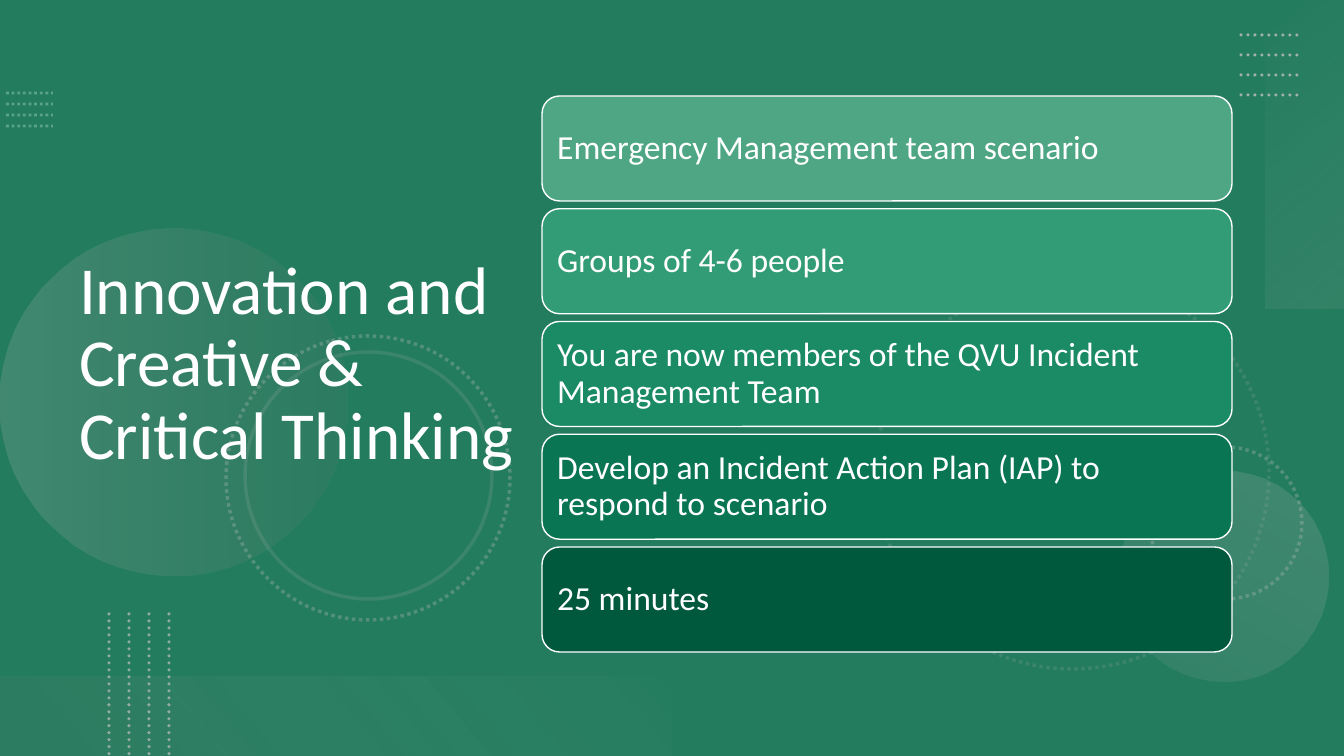
import pptx
import pptx.util
import pptx.dml.color
import pptx.enum.dml
import pptx.enum.shapes
import pptx.enum.text
import pptx.oxml
import pptx.oxml.ns
from lxml import etree

SCALE = 12192000 / 1344
FONT = "Calibri"
SHAPES = pptx.enum.shapes.MSO_SHAPE
NAMESPACE = pptx.oxml.ns.nsdecls("a")


def px(length):
    return pptx.util.Emu(round(length * SCALE))


def color(value):
    return pptx.dml.color.RGBColor.from_string(value)


def set_alpha(fill_parent, percent):
    tag = pptx.oxml.ns.qn("a:srgbClr")
    clr = next(fill_parent.iter(tag))
    etree.SubElement(clr, pptx.oxml.ns.qn("a:alpha"), val=str(percent * 1000))


def style_line(line, value, width, alpha=100, dotted=False):
    line.color.rgb = color(value)
    line.width = pptx.util.Pt(width)
    if dotted:
        line.dash_style = pptx.enum.dml.MSO_LINE.ROUND_DOT
    if alpha < 100:
        set_alpha(line._get_or_add_ln(), alpha)


def add_plain_shape(slide, kind, box, rotation=0):
    shape = slide.shapes.add_shape(kind, *map(px, box))
    shape.rotation = rotation
    shape.shadow.inherit = False
    shape.fill.background()
    shape.line.fill.background()
    return shape


def add_gradient_shape(slide, kind, box, rotation, angle, stops):
    shape = add_plain_shape(slide, kind, box, rotation)
    stop_xml = "".join(
        f'<a:gs pos="{position * 1000}"><a:srgbClr val="{value}">'
        f'<a:alpha val="{alpha * 1000}"/></a:srgbClr></a:gs>'
        for position, value, alpha in stops
    )
    gradient = pptx.oxml.parse_xml(
        f'<a:gradFill {NAMESPACE} rotWithShape="1"><a:gsLst>{stop_xml}</a:gsLst>'
        f'<a:lin ang="{angle * 60000}" scaled="0"/></a:gradFill>'
    )
    properties = shape._element.spPr
    properties.replace(properties.find(pptx.oxml.ns.qn("a:noFill")), gradient)


def add_ring(slide, box, rotation, alpha, dotted=True):
    ring = add_plain_shape(slide, SHAPES.OVAL, box, rotation)
    style_line(ring.line, "BFBFBF", 2.5, alpha, dotted)


def add_dotted_lines(slide, box, count, vertical, value, width, alpha, cap="flat"):
    left, top, box_width, box_height = box
    gap = (box_width if vertical else box_height) / (count - 1)
    for index in range(count):
        if vertical:
            x = left + index * gap
            ends = (x, top, x, top + box_height)
        else:
            y = top + index * gap
            ends = (left, y, left + box_width, y)
        connector = slide.shapes.add_connector(
            pptx.enum.shapes.MSO_CONNECTOR.STRAIGHT, *map(px, ends)
        )
        style_line(connector.line, value, width, alpha, dotted=True)
        connector.line._get_or_add_ln().set("cap", cap)
        etree.SubElement(connector._element.spPr, pptx.oxml.ns.qn("a:effectLst"))


def set_text(shape, text, size, inset):
    frame = shape.text_frame
    frame.word_wrap = True
    frame.vertical_anchor = pptx.enum.text.MSO_ANCHOR.MIDDLE
    frame.margin_left = frame.margin_right = px(inset)
    frame.text = text
    paragraph = frame.paragraphs[0]
    paragraph.alignment = pptx.enum.text.PP_ALIGN.LEFT
    paragraph.line_spacing = 0.9
    font = paragraph.runs[0].font
    font.name = FONT
    font.size = pptx.util.Pt(size)
    font.color.rgb = color("FFFFFF")


def add_backdrop(slide, box):
    left, top, width, height = box
    right, bottom = left + width, top + height
    slide.background.fill.solid()
    slide.background.fill.fore_color.rgb = color("4EA685")
    overlay = add_plain_shape(slide, SHAPES.RECTANGLE, box)
    overlay.fill.solid()
    overlay.fill.fore_color.rgb = color("00583D")
    set_alpha(overlay._element.spPr, 53)

    add_dotted_lines(slide, (left + 6, top + 93, 47, 33), 4, False, "92CCB6", 2, 50)
    add_ring(slide, (right - 468, top + 276, 393, 393), 75, 15)
    add_ring(slide, (right - 194, top + 447, 152, 152), 270, 30)
    add_gradient_shape(
        slide, SHAPES.OVAL, (left, top + 229, 347, 347), 270, 90,
        [(0, "BFBFBF", 20), (100, "808080", 10)],
    )
    add_gradient_shape(
        slide, SHAPES.OVAL, (right - 225, top + 471, 210, 210), 210, 90,
        [(0, "BFBFBF", 10), (100, "BFBFBF", 20)],
    )
    add_ring(slide, (left + 226, top + 336, 284, 284), 75, 30)
    add_ring(slide, (left + 245, top + 352, 247, 247), 75, 15, dotted=False)
    add_gradient_shape(
        slide, SHAPES.RECTANGLE, (right - 193, top + 115, 308, 79), 270, 140,
        [(0, "FFFFFF", 0), (100, "BFBFBF", 10)],
    )
    add_dotted_lines(
        slide, (right - 103, top + 35, 60, 60), 4, False, "BFBFBF", 2.5, 80, "rnd"
    )
    add_gradient_shape(
        slide, SHAPES.RECTANGLE, (left, bottom - 79, width // 2, 79), 180, 140,
        [(10, "808080", 10), (100, "FFFFFF", 0)],
    )
    add_dotted_lines(
        slide, (left + 109, bottom - 142, 60, 142), 4, True, "BFBFBF", 2.5, 70, "rnd"
    )


def add_steps(slide, box, steps):
    left, top, width, height = box
    step_height = 105
    pitch = (height - step_height) / (len(steps) - 1)
    for index, (text, fill) in enumerate(steps):
        step = add_plain_shape(
            slide, SHAPES.ROUNDED_RECTANGLE,
            (left, top + index * pitch, width, step_height),
        )
        step.fill.solid()
        step.fill.fore_color.rgb = color(fill)
        style_line(step.line, "FFFFFF", 1)
        set_text(step, text, 24, 10)


def add_title(slide, box, text):
    title = slide.shapes.add_textbox(*map(px, box))
    set_text(title, text, 48, 10)


def main():
    presentation = pptx.Presentation()
    presentation.slide_width = px(1344)
    presentation.slide_height = px(756)
    slide = presentation.slides.add_slide(presentation.slide_layouts[6])
    add_backdrop(slide, (0, 0, 1344, 756))
    add_steps(slide, (542, 96, 690, 556), [
        ("Emergency Management team scenario", "4EA685"),
        ("Groups of 4-6 people", "319C76"),
        ("You are now members of the QVU Incident Management Team", "1B8B65"),
        ("Develop an Incident Action Plan (IAP) to respond to scenario", "0A7552"),
        ("25 minutes", "00583D"),
    ])
    add_title(slide, (69, 54, 463, 622), "Innovation and Creative & Critical Thinking")
    presentation.save("out.pptx")


if __name__ == "__main__":
    main()
